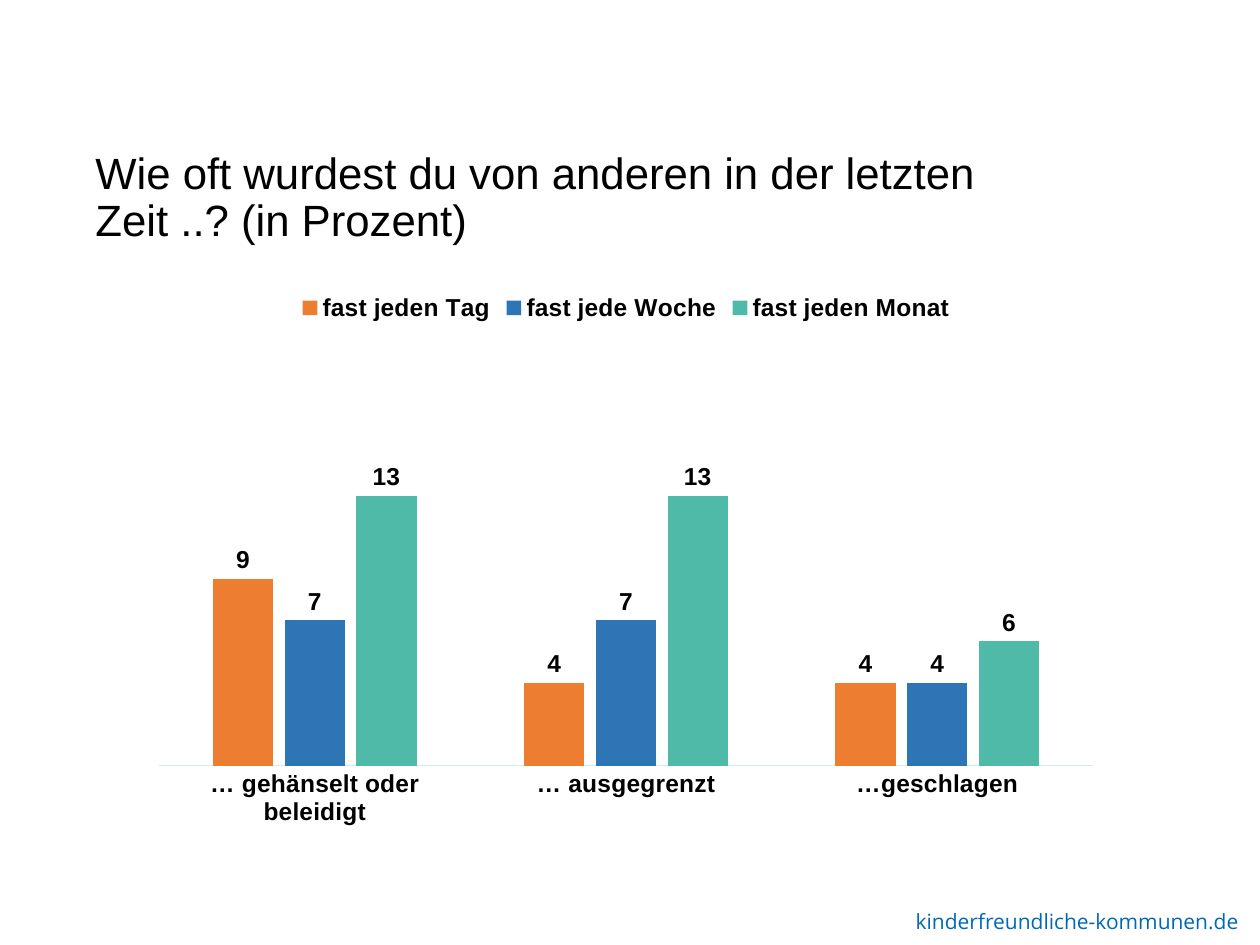
import pptx
import pptx.chart.data
import pptx.dml.color
import pptx.enum.chart
import pptx.enum.text
import pptx.oxml
import pptx.oxml.ns
import pptx.util

Pt = pptx.util.Pt
CHART = pptx.enum.chart

COLORS = {
    "text": "000000",
    "link": "0069B5",
    "axis": "CEEAFF",
    "daily": "ED7D31",
    "weekly": "2E75B6",
    "monthly": "50BAA8",
}
TITLE = {"name": "Arial", "size": Pt(25), "color": "text"}
FOOTER = {"name": "Open Sans", "size": Pt(12), "color": "link"}
CHART_TEXT = {"name": "Arial", "size": Pt(14), "bold": True, "color": "text"}

CATEGORIES = ["… gehänselt oder beleidigt", "… ausgegrenzt", "…geschlagen"]
SERIES = [
    ("fast jeden Tag", (9, 4, 4), "daily"),
    ("fast jede Woche", (7, 7, 4), "weekly"),
    ("fast jeden Monat", (13, 13, 6), "monthly"),
]
PLOT_AREA = {"x": 0.07, "y": 0.33, "w": 0.86, "h": 0.49}


def set_values(target, values):
    for name, value in values.items():
        setattr(target, name, value)


class SlideBuilder:
    """Holds the palette and the slide being filled."""

    def __init__(self, slide, colors):
        self.slide = slide
        self.colors = colors

    def rgb(self, name):
        return pptx.dml.color.RGBColor.from_string(self.colors[name])

    def style_font(self, font, style):
        set_values(font, {key: value for key, value in style.items() if key != "color"})
        font.color.rgb = self.rgb(style["color"])

    def text(self, lines, left, top, width, height, style, spacing=1.0, wrap=True):
        box = self.slide.shapes.add_textbox(Pt(left), Pt(top), Pt(width), Pt(height))
        frame = box.text_frame
        frame.word_wrap = wrap
        frame.vertical_anchor = pptx.enum.text.MSO_ANCHOR.TOP
        for index, line in enumerate(lines):
            para = frame.add_paragraph() if index else frame.paragraphs[0]
            para.line_spacing = spacing
            span = para.add_run()
            span.text = line
            self.style_font(span.font, style)

    def column_chart(self, categories, series, left, top, width, height, style, maximum):
        data = pptx.chart.data.CategoryChartData()
        data.categories = categories
        for name, values, _ in series:
            data.add_series(name, values)
        chart = self.slide.shapes.add_chart(
            CHART.XL_CHART_TYPE.COLUMN_CLUSTERED,
            Pt(left), Pt(top), Pt(width), Pt(height), data,
        ).chart
        chart.has_title = False
        self.style_font(chart.font, style)

        chart.has_legend = True
        set_values(chart.legend, {
            "position": CHART.XL_LEGEND_POSITION.TOP,
            "include_in_layout": False,
        })
        self.style_font(chart.legend.font, style)

        set_values(chart.value_axis, {
            "visible": False,
            "has_major_gridlines": False,
            "minimum_scale": 0,
            "maximum_scale": maximum,
        })
        axis = chart.category_axis
        axis.major_tick_mark = CHART.XL_TICK_MARK.NONE
        axis.format.line.color.rgb = self.rgb("axis")
        axis.format.line.width = Pt(0.75)
        self.style_font(axis.tick_labels.font, style)

        plot = chart.plots[0]
        set_values(plot, {"gap_width": 178, "overlap": -19, "vary_by_categories": False})
        for bars, (_, _, color) in zip(plot.series, series):
            bars.format.fill.solid()
            bars.format.fill.fore_color.rgb = self.rgb(color)
            labels = bars.data_labels
            set_values(labels, {
                "show_value": True,
                "position": CHART.XL_LABEL_POSITION.OUTSIDE_END,
            })
            self.style_font(labels.font, style)
        return chart

    def place_plot(self, chart, area):
        """Fix the inner plot area, given as fractions of the chart."""
        sizes = "".join(f'<c:{key} val="{value}"/>' for key, value in area.items())
        layout = pptx.oxml.parse_xml(
            f'<c:layout {pptx.oxml.ns.nsdecls("c")}><c:manualLayout>'
            '<c:layoutTarget val="inner"/><c:xMode val="edge"/><c:yMode val="edge"/>'
            f"{sizes}</c:manualLayout></c:layout>"
        )
        plot_area = chart.element.find(".//" + pptx.oxml.ns.qn("c:plotArea"))
        for old in plot_area.findall(pptx.oxml.ns.qn("c:layout")):
            plot_area.remove(old)
        plot_area.insert(0, layout)


def main():
    deck = pptx.Presentation()
    deck.slide_width, deck.slide_height = Pt(720), Pt(540)
    page = SlideBuilder(deck.slides.add_slide(deck.slide_layouts[6]), COLORS)
    page.text(["kinderfreundliche-kommunen.de"], 516.2, 515.5, 211, 21.6, FOOTER, wrap=False)
    page.text(
        ["Wie oft wurdest du von anderen in der letzten", "Zeit ..? (in Prozent)"],
        47.5, 83, 628.5, 77, TITLE, spacing=0.9,
    )
    chart = page.column_chart(
        CATEGORIES, SERIES, 47.5, 160, 620.5, 338.5, CHART_TEXT, maximum=14
    )
    page.place_plot(chart, PLOT_AREA)
    deck.save("out.pptx")


if __name__ == "__main__":
    main()
